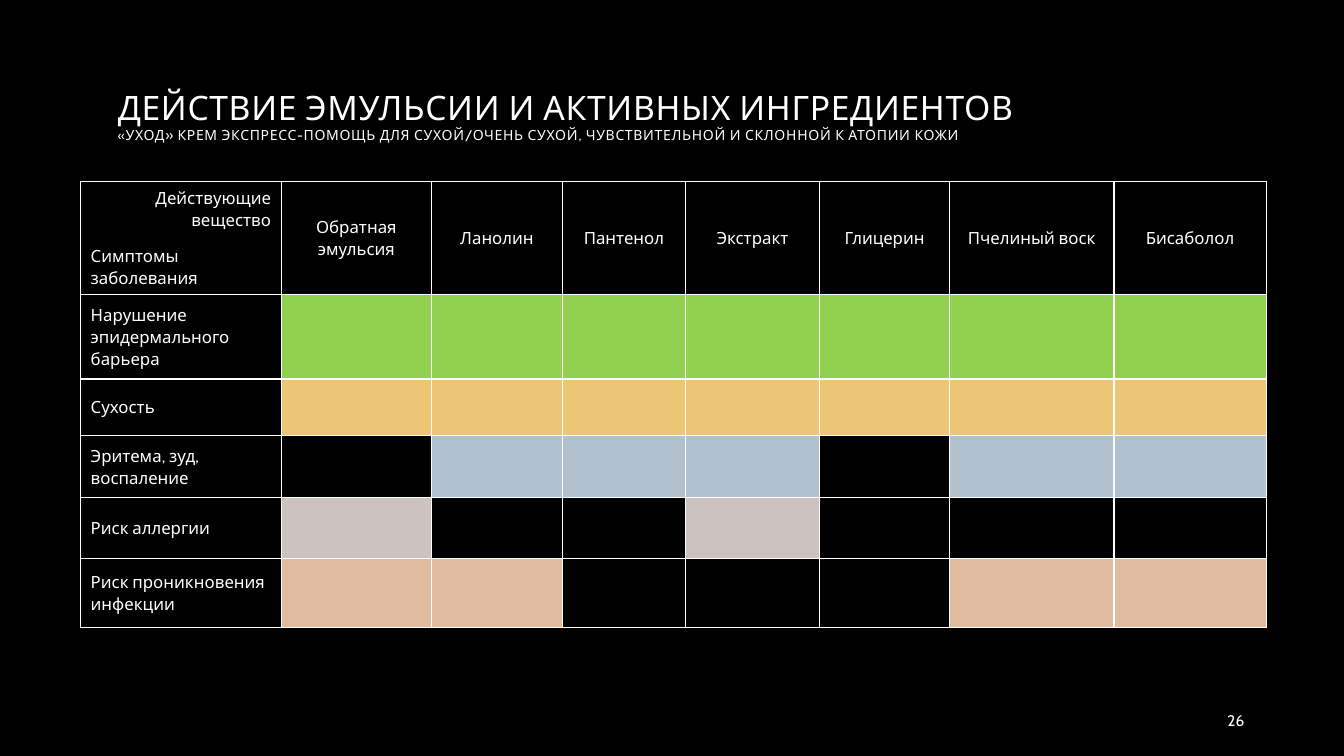
from dataclasses import dataclass

from pptx import Presentation
from pptx.dml.color import RGBColor
from pptx.enum.text import MSO_ANCHOR as Anchor, PP_ALIGN as Align
from pptx.oxml import parse_xml
from pptx.oxml.ns import nsdecls
from pptx.util import Inches, Pt


@dataclass(frozen=True)
class Theme:
    font: str = "Cabin"
    background: str = "000000"
    text: str = "FFFFFF"
    barrier: str = "92D050"
    dryness: str = "ECC577"
    erythema: str = "B2C1CE"
    allergy: str = "CCC3BE"
    infection: str = "E0BBA0"
    title_size: int = 24
    subtitle_size: int = 10
    quote_size: int = 9
    table_size: int = 12
    number_size: int = 11
    title_spacing: int = 50  # hundredths of a point
    border_width: int = 1


THEME = Theme()

CORNER = ("Действующие вещество", "Симптомы заболевания")
INGREDIENTS = ("Обратная эмульсия", "Ланолин", "Пантенол", "Экстракт",
               "Глицерин", "Пчелиный воск", "Бисаболол")
# Symptom, colour, and one mark per ingredient: x where it acts
SYMPTOMS = (
    ("Нарушение эпидермального барьера", THEME.barrier, "xxxxxxx"),
    ("Сухость", THEME.dryness, "xxxxxxx"),
    ("Эритема, зуд, воспаление", THEME.erythema, "-xxx-xx"),
    ("Риск аллергии", THEME.allergy, "x--x---"),
    ("Риск проникновения инфекции", THEME.infection, "xx---xx"),
)
COLUMN_WIDTHS = (1.99, 1.49, 1.3, 1.22, 1.33, 1.29, 1.63, 1.51)
ROW_HEIGHTS = (1.12, 0.84, 0.56, 0.62, 0.6, 0.69)


def apply_format(target, values):
    for name, value in values.items():
        setattr(target, name, value)


def add_run(paragraph, text, size):
    run = paragraph.add_run()
    run.text = text
    apply_format(run.font, {"name": THEME.font, "size": Pt(size)})
    run.font.color.rgb = RGBColor.from_string(THEME.text)
    return run


def add_text_frame(slide, box, anchor):
    frame = slide.shapes.add_textbox(*map(Inches, box)).text_frame
    apply_format(frame, {"word_wrap": True, "vertical_anchor": anchor})
    return frame


def add_title(slide):
    frame = add_text_frame(slide, (1.07, 0.33, 11.34, 1.14), Anchor.BOTTOM)
    paragraph = frame.paragraphs[0]
    paragraph.line_spacing = 0.9
    heading = add_run(paragraph, "ДЕЙСТВИЕ ЭМУЛЬСИИ И АКТИВНЫХ ИНГРЕДИЕНТОВ",
                      THEME.title_size)
    paragraph.add_line_break()
    quote = add_run(paragraph, "«", THEME.quote_size)
    subtitle = add_run(
        paragraph,
        "УХОД» КРЕМ ЭКСПРЕСС-ПОМОЩЬ ДЛЯ СУХОЙ/ОЧЕНЬ СУХОЙ, "
        "ЧУВСТВИТЕЛЬНОЙ И СКЛОННОЙ К АТОПИИ КОЖИ",
        THEME.subtitle_size)
    for run in (heading, quote, subtitle):
        run.font._element.set("spc", str(THEME.title_spacing))


def add_page_number(slide, number):
    frame = add_text_frame(slide, (11, 6.95, 1.44, 0.4), Anchor.MIDDLE)
    frame.paragraphs[0].alignment = Align.RIGHT
    add_run(frame.paragraphs[0], str(number), THEME.number_size)


def style_cell(cell, color):
    """Draw all four borders, then the fill, as the schema orders them."""
    properties = cell._tc.get_or_add_tcPr()
    for side in "LRTB":
        properties.append(parse_xml(
            f'<a:ln{side} {nsdecls("a")} w="{Pt(THEME.border_width)}">'
            f'<a:solidFill><a:srgbClr val="{THEME.text}"/></a:solidFill>'
            f'</a:ln{side}>'))
    cell.fill.solid()
    cell.fill.fore_color.rgb = RGBColor.from_string(color)
    cell.vertical_anchor = Anchor.MIDDLE


def write_cell(cell, *lines):
    """Write one paragraph for each (text, alignment) pair."""
    frame = cell.text_frame
    for index, (text, alignment) in enumerate(lines):
        paragraph = frame.add_paragraph() if index else frame.paragraphs[0]
        apply_format(paragraph, {"alignment": alignment, "line_spacing": 1.07})
        if index:
            paragraph.space_before = Pt(10)
        add_run(paragraph, text, THEME.table_size)


def add_effect_table(slide):
    table = slide.shapes.add_table(
        len(ROW_HEIGHTS), len(COLUMN_WIDTHS), Inches(0.8), Inches(1.8),
        Inches(sum(COLUMN_WIDTHS)), Inches(sum(ROW_HEIGHTS))).table
    apply_format(table, {"first_row": False, "horz_banding": False})
    for column, width in zip(table.columns, COLUMN_WIDTHS):
        column.width = Inches(width)
    for row, height in zip(table.rows, ROW_HEIGHTS):
        row.height = Inches(height)

    write_cell(table.cell(0, 0), *zip(CORNER, (Align.RIGHT, Align.LEFT)))
    for column, ingredient in enumerate(INGREDIENTS, 1):
        write_cell(table.cell(0, column), (ingredient, Align.CENTER))
    for column in range(len(COLUMN_WIDTHS)):
        style_cell(table.cell(0, column), THEME.background)

    for row, (symptom, color, marks) in enumerate(SYMPTOMS, 1):
        write_cell(table.cell(row, 0), (symptom, Align.LEFT))
        for column, mark in enumerate("-" + marks):
            style_cell(table.cell(row, column),
                       color if mark == "x" else THEME.background)


def main():
    deck = Presentation()
    apply_format(deck, {"slide_width": Inches(13.33),
                        "slide_height": Inches(7.5)})
    slide = deck.slides.add_slide(deck.slide_layouts[6])
    slide.background.fill.solid()
    slide.background.fill.fore_color.rgb = RGBColor.from_string(THEME.background)
    add_title(slide)
    add_effect_table(slide)
    add_page_number(slide, 26)
    deck.save("out.pptx")


if __name__ == "__main__":
    main()
